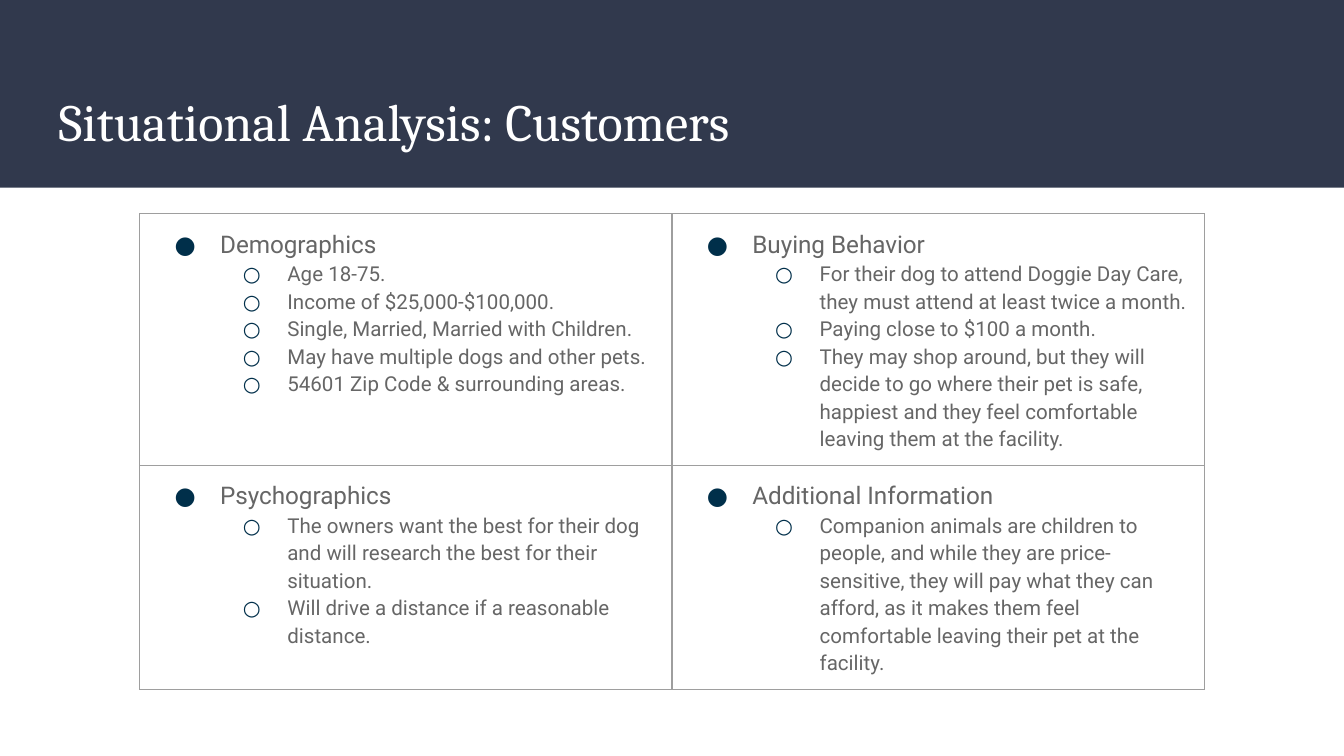
"""Build the customer analysis slide."""
from lxml import etree
from pptx import Presentation
from pptx.dml.color import RGBColor
from pptx.enum.shapes import MSO_SHAPE
from pptx.enum.text import MSO_ANCHOR, PP_ALIGN
from pptx.oxml.ns import qn
from pptx.util import Cm, Pt

RECT = MSO_SHAPE.RECTANGLE
LOW, TOP = MSO_ANCHOR.BOTTOM, MSO_ANCHOR.TOP
LEFT = PP_ALIGN.LEFT
COLORS = {"band": "31394D", "head": "FFFFFF", "body": "666666",
          "dot": "002F4A", "edge": "9E9E9E"}
PAD = Cm(0.25)
GRID = [
    [("Demographics",
      ["Age 18-75.",
       "Income of $25,000-$100,000.",
       "Single, Married, Married with Children.",
       "May have multiple dogs and other pets.",
       "54601 Zip Code & surrounding areas."]),
     ("Buying Behavior",
      ["For their dog to attend Doggie Day Care, they must attend at least "
       "twice a month.",
       "Paying close to $100 a month.",
       "They may shop around, but they will decide to go where their pet is "
       "safe, happiest and they feel comfortable leaving them at the "
       "facility."])],
    [("Psychographics",
      ["The owners want the best for their dog and will research the best "
       "for their situation.",
       "Will drive a distance if a reasonable distance."]),
     ("Additional Information",
      ["Companion animals are children to people, and while they are "
       "price-sensitive, they will pay what they can afford, as it makes "
       "them feel comfortable leaving their pet at the facility."])],
]


def rgb(name):
    return RGBColor.from_string(COLORS[name])


def put(para, text, size=11, font="Roboto", color="body", space=None):
    run = para.add_run()
    run.text = text
    run.font.size = Pt(size)
    run.font.name = font
    run.font.color.rgb = rgb(color)
    para.alignment = LEFT
    para.line_spacing = space


def add_dot(para, mark, left, hang):
    props = para._p.get_or_add_pPr()
    props.set("marL", str(left))
    props.set("indent", str(-hang))
    tint = etree.SubElement(props, qn("a:buClr"))
    etree.SubElement(tint, qn("a:srgbClr"), val=COLORS["dot"])
    etree.SubElement(props, qn("a:buFont"), typeface="Roboto")
    etree.SubElement(props, qn("a:buChar"), char=mark)


def add_edges(cell):
    props = cell._tc.get_or_add_tcPr()
    for side in ("lnL", "lnR", "lnT", "lnB"):
        line = etree.SubElement(props, qn(f"a:{side}"), w=str(Pt(0.75)))
        fill = etree.SubElement(line, qn("a:solidFill"))
        etree.SubElement(fill, qn("a:srgbClr"), val=COLORS["edge"])


def set_pad(box):
    box.margin_left = box.margin_right = PAD
    box.margin_top = box.margin_bottom = PAD


def fill_cell(cell, head, items):
    add_edges(cell)
    cell.fill.background()
    set_pad(cell)
    cell.vertical_anchor = TOP
    frame = cell.text_frame
    para = frame.paragraphs[0]
    put(para, head, size=13, space=1.15)
    add_dot(para, "●", Cm(1.27), Cm(0.86))
    for item in items:
        para = frame.add_paragraph()
        para.level = 1
        put(para, item, space=1.15)
        add_dot(para, "○", Cm(2.54), Cm(0.84))


def add_title(slide, text):
    title = slide.shapes.title
    title.left, title.top = Cm(0.86), Cm(1.4)
    title.width, title.height = Cm(23.67), Cm(1.73)
    frame = title.text_frame
    set_pad(frame)
    frame.word_wrap = True
    frame.vertical_anchor = LOW
    put(frame.paragraphs[0], text, size=28, font="Cambria", color="head")


def add_band(slide, width):
    band = slide.shapes.add_shape(RECT, 0, 0, width, Cm(3.55))
    band.shadow.inherit = False
    band.fill.solid()
    band.fill.fore_color.rgb = rgb("band")
    band.line.fill.background()
    slide.shapes.title._element.addprevious(band._element)


def add_grid(slide):
    highs = (Cm(4.5), Cm(3.91))
    wide = Cm(10.06)
    table = slide.shapes.add_table(
        2, 2, Cm(2.64), Cm(4.04), 2 * wide, sum(highs)).table
    table.first_row = table.horz_banding = False
    for col in table.columns:
        col.width = wide
    for row, high, cells in zip(table.rows, highs, GRID):
        row.height = high
        for cell, (head, items) in zip(row.cells, cells):
            fill_cell(cell, head, items)


def main():
    deck = Presentation()
    deck.slide_width, deck.slide_height = Cm(25.4), Cm(14.29)
    slide = deck.slides.add_slide(deck.slide_layouts[5])
    add_title(slide, "Situational Analysis: Customers")
    add_band(slide, deck.slide_width)
    add_grid(slide)
    deck.save("out.pptx")


if __name__ == "__main__":
    main()
